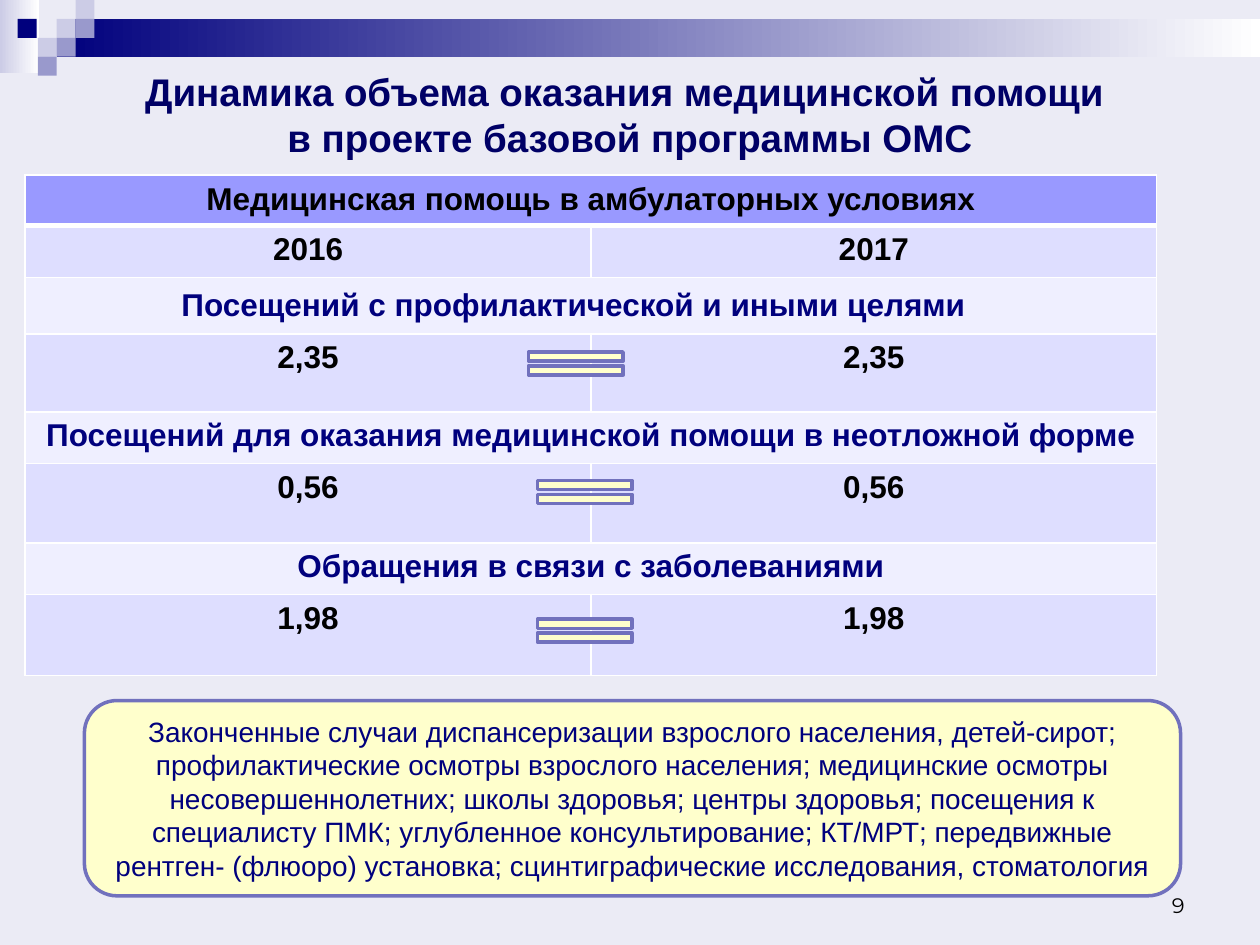
from typing import NamedTuple

from lxml.etree import SubElement
from pptx import Presentation
from pptx.dml.color import RGBColor
from pptx.enum.shapes import MSO_SHAPE as Shape
from pptx.enum.text import MSO_ANCHOR as Anchor, PP_ALIGN as Align
from pptx.oxml.ns import qn
from pptx.util import Inches, Pt

COLORS = {
    "background": "EBEBF5", "navy": "00007D", "title": "000066", "black": "000000",
    "white": "FFFFFF", "lavender": "CCCCE6", "violet": "9999CC", "header": "9999FF",
    "values": "DEDEFF", "section": "EFEFFF", "cream": "FFFFCC", "outline": "7171BD",
}
TILE = 0.15


class Box(NamedTuple):
    left: float
    top: float
    width: float
    height: float


class Row(NamedTuple):
    height: float
    texts: tuple[str, ...]
    fill: str
    color: str = "black"
    anchor: Anchor = Anchor.TOP


class Tile(NamedTuple):
    left: float
    top: float
    color: str


TILES = [
    Tile(0.45, 0.15, "lavender"), Tile(0.6, 0, "lavender"), Tile(0.6, 0.15, "violet"),
    Tile(0.3, 0.3, "lavender"), Tile(0.14, 0.15, "navy"), Tile(0.45, 0.3, "violet"),
    Tile(0.3, 0.45, "violet"),
]
ROWS = [
    Row(0.37, ("Медицинская помощь в амбулаторных условиях",), "header"),
    Row(0.41, ("2016", "2017"), "values"),
    Row(0.45, ("Посещений с профилактической и иными целями \t",), "section", "navy", Anchor.MIDDLE),
    Row(0.62, ("2,35", "2,35"), "values"),
    Row(0.41, ("Посещений для оказания медицинской помощи в неотложной форме",), "section", "navy"),
    Row(0.63, ("0,56", "0,56"), "values"),
    Row(0.41, ("Обращения в связи с заболеваниями",), "section", "navy"),
    Row(0.64, ("1,98", "1,98"), "values"),
]
EQUAL_SIGNS = [(4.06, 2.73), (4.13, 3.75), (4.13, 4.85)]
SERVICES = (
    "Законченные случаи диспансеризации взрослого населения, детей-сирот; "
    "профилактические осмотры взрослого населения; медицинские осмотры "
    "несовершеннолетних; школы здоровья; центры здоровья; посещения к "
    "специалисту ПМК; углубленное консультирование; КТ/МРТ; передвижные "
    "рентген- (флюоро) установка; сцинтиграфические исследования, стоматология"
)


def rgb(name: str) -> RGBColor:
    return RGBColor.from_string(COLORS[name])


def write(frame, text: str, *, size: float, color: str, bold: bool = False,
          font: str = "Arial", align: Align = Align.CENTER) -> None:
    paragraph = frame.paragraphs[0]
    paragraph.text = text
    paragraph.alignment = align
    for run in paragraph.runs:
        run.font.name = font
        run.font.size = Pt(size)
        run.font.bold = bold
        run.font.color.rgb = rgb(color)


def add_shape(slide, kind: Shape, box: Box, fill: str, line: str | None = None,
              fade_to: str | None = None):
    shape = slide.shapes.add_shape(kind, *map(Inches, box))
    shape.shadow.inherit = False
    if fade_to:
        shape.fill.gradient()
        shape.fill.gradient_angle = 0
        for stop, color, position in zip(shape.fill.gradient_stops, (fill, fade_to), (0, 1)):
            stop.color.rgb = rgb(color)
            stop.position = position
    else:
        shape.fill.solid()
        shape.fill.fore_color.rgb = rgb(fill)
    if line:
        shape.line.color.rgb = rgb(line)
        shape.line.width = Pt(2)
    else:
        shape.line.fill.background()
    return shape


def add_label(slide, box: Box, anchor: Anchor, text: str, **style) -> None:
    frame = slide.shapes.add_textbox(*map(Inches, box)).text_frame
    frame.word_wrap = True
    frame.vertical_anchor = anchor
    write(frame, text, **style)


def set_borders(cell, top: float = 1, bottom: float = 1) -> None:
    properties = cell._tc.get_or_add_tcPr()
    for side, width in {"L": 1, "R": 1, "T": top, "B": bottom}.items():
        border = SubElement(properties, qn(f"a:ln{side}"), w=str(Pt(width)))
        fill = SubElement(border, qn("a:solidFill"))
        SubElement(fill, qn("a:srgbClr"), val=COLORS["white"])


def add_volumes(slide, box: Box) -> None:
    table = slide.shapes.add_table(len(ROWS), 2, *map(Inches, box)).table
    for column in table.columns:
        column.width = Inches(box.width / 2)
    for index, row in enumerate(ROWS):
        table.rows[index].height = Inches(row.height)
        cells = [table.cell(index, column) for column in range(2)]
        for cell in cells:
            set_borders(cell, top=3 if index == 1 else 1, bottom=3 if index == 0 else 1)
            cell.fill.solid()
            cell.fill.fore_color.rgb = rgb(row.fill)
            cell.vertical_anchor = row.anchor
        if len(row.texts) == 1:
            cells[0].merge(cells[1])
        for cell, text in zip(cells, row.texts):
            write(cell.text_frame, text, size=18, color=row.color, bold=True)


def main() -> None:
    """Build the slide on medical care volumes and save it."""
    deck = Presentation()
    deck.slide_width, deck.slide_height = Inches(10), Inches(7.5)
    slide = deck.slides.add_slide(deck.slide_layouts[6])
    slide.background.fill.solid()
    slide.background.fill.fore_color.rgb = rgb("background")

    add_shape(slide, Shape.RECTANGLE, Box(0, 0, 0.31, 0.58), "lavender", fade_to="white")
    add_shape(slide, Shape.RECTANGLE, Box(0.45, 0.15, 9.55, 0.3), "navy", fade_to="white")
    for tile in TILES:
        add_shape(slide, Shape.RECTANGLE, Box(tile.left, tile.top, TILE, TILE), tile.color)

    add_label(slide, Box(0.5, 0.5, 9, 0.81), Anchor.MIDDLE,
              "Динамика объема оказания медицинской помощи \nв проекте базовой программы ОМС",
              size=22, color="title", bold=True)
    add_volumes(slide, Box(0.2, 1.39, 8.98, 3.94))
    add_label(slide, Box(7.17, 6.83, 2.33, 0.5), Anchor.BOTTOM, "9",
              size=12, color="black", font="Montserrat", align=Align.RIGHT)

    services = add_shape(slide, Shape.ROUNDED_RECTANGLE, Box(0.67, 5.56, 8.7, 1.55),
                         "cream", "outline").text_frame
    services.word_wrap = True
    services.vertical_anchor = Anchor.MIDDLE
    write(services, SERVICES, size=16, color="navy")
    for left, top in EQUAL_SIGNS:
        add_shape(slide, Shape.MATH_EQUAL, Box(left, top, 1.02, 0.31), "cream", "outline")

    deck.save("out.pptx")


if __name__ == "__main__":
    main()
